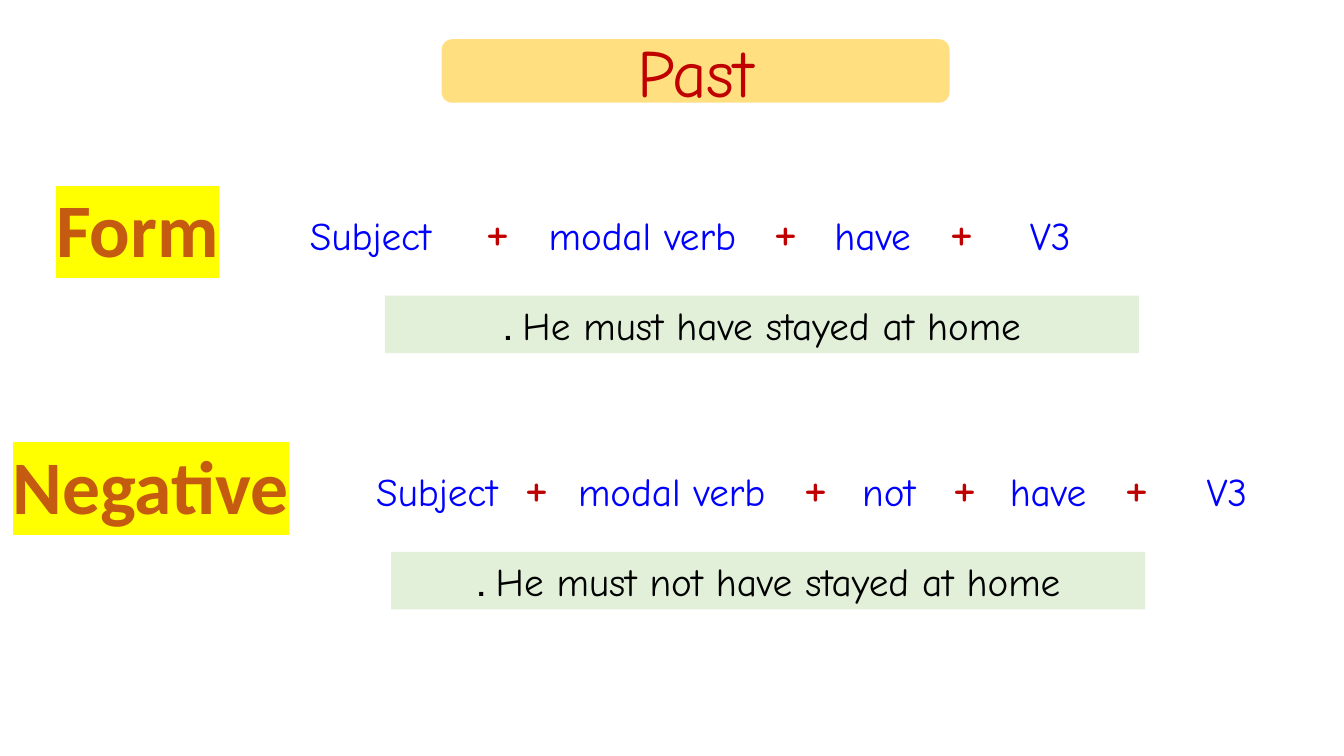
from lxml import etree
from pptx import Presentation, util as u
from pptx.dml import color
from pptx.enum import shapes, text
from pptx.oxml import ns

COMIC, BLUE, RED = "Comic Neue", "0000FF", "C00000"


def rgb(code):
    return color.RGBColor.from_string(code)


def node(tag, root=None, **attrs):
    item = etree.Element(ns.qn(tag), {k: str(v) for k, v in attrs.items()})
    if root is not None:
        root.append(item)
    return item


class Deck:
    """Holds the style and the current slide, and draws each kind of element."""

    def __init__(self):
        self.show = Presentation()
        self.show.slide_width, self.show.slide_height = u.Cm(33.87), u.Cm(19.05)
        self.slide = self.show.slides.add_slide(self.show.slide_layouts[6])

    def style(self, run, size, tint, face=COMIC, bold=False):
        font = run.font
        font.size, font.name, font.bold = u.Pt(size), face, bold
        font.color.rgb = rgb(tint)

    def box(self, *place):
        box = self.slide.shapes.add_textbox(*map(u.Cm, place))
        box.text_frame.word_wrap = True
        box.text_frame.auto_size = text.MSO_AUTO_SIZE.SHAPE_TO_FIT_TEXT
        return box.text_frame.paragraphs[0]

    def label(self, words, *place):
        para = self.box(*place)
        para.text = words
        para.alignment = text.PP_ALIGN.CENTER
        run = para.runs[0]
        self.style(run, 54, "C55A11", "Calibri", True)
        props = run.font._element
        line = node("a:ln", w=9525)
        node("a:srgbClr", node("a:solidFill", line), val="FFFFFF")
        props.insert(0, line)
        mark = node("a:highlight")
        node("a:srgbClr", mark, val="FFFF00")
        props.find(ns.qn("a:latin")).addprevious(mark)

    def form(self, parts, stops, *place):
        para = self.box(*place)
        for part in parts:
            run = para.add_run()
            run.text = "\t" + part
            self.style(run, *((40, RED) if part == "+" else (28, BLUE)))
        tabs = node("a:tabLst", para._p.get_or_add_pPr())
        for stop in stops:
            node("a:tab", tabs, pos=int(u.Cm(stop)), algn="ctr")

    def panel(self, kind, words, size, tint, fill, *place):
        shape = self.slide.shapes.add_shape(kind, *map(u.Cm, place))
        shape.shadow.inherit = False
        shape.fill.solid()
        shape.fill.fore_color.rgb = rgb(fill)
        shape.line.fill.background()
        frame = shape.text_frame
        frame.word_wrap = True
        frame.vertical_anchor = text.MSO_ANCHOR.MIDDLE
        frame.text = words
        para = frame.paragraphs[0]
        para.alignment = text.PP_ALIGN.CENTER
        self.style(para.runs[0], size, tint)
        return shape

    def case(self, words, *place):
        shape = self.panel(shapes.MSO_SHAPE.RECTANGLE, words, 28, "000000", "E2F0D9", *place)
        frame = shape.text_frame
        frame.auto_size = text.MSO_AUTO_SIZE.SHAPE_TO_FIT_TEXT
        frame.paragraphs[0]._p.get_or_add_pPr().set("rtl", "1")

    def title(self, words, *place):
        kind = shapes.MSO_SHAPE.ROUNDED_RECTANGLE
        shape = self.panel(kind, words, 48, RED, "FFC000", *place)
        tone = shape._element.spPr.find(ns.qn("a:solidFill"))[0]
        node("a:alpha", tone, val=50000)


def main():
    deck = Deck()
    deck.title("Past", 11.13, 0.99, 12.8, 1.6)
    rows = [
        ("Form", -0.03, 6.99, ["Subject", "+", "modal verb", "+", "have", "+", "V3"],
         [1.55, 4.77, 8.4, 12.01, 14.2, 16.44, 18.68], 7.54, 23.27,
         "He must have stayed at home .", 9.7),
        ("Negative", 0.03, 7.54,
         ["Subject", "+", "modal verb", "+", "not", "+", "have", "+", "V3"],
         [2.02, 4.54, 7.94, 11.57, 13.41, 15.33, 17.42, 19.66, 21.93], 8.74, 24.41,
         "He must not have stayed at home .", 9.86),
    ]
    for i, (name, left, wide, parts, stops, start, span, words, edge) in enumerate(rows):
        top = 4.47 + 6.46 * i
        deck.label(name, left, top, wide, 2.57)
        deck.form(parts, stops, start, top + 0.31, span, 1.96)
        deck.case(words, edge, top + 2.98, 19, 1.45)
    deck.show.save("out.pptx")


if __name__ == "__main__":
    main()
